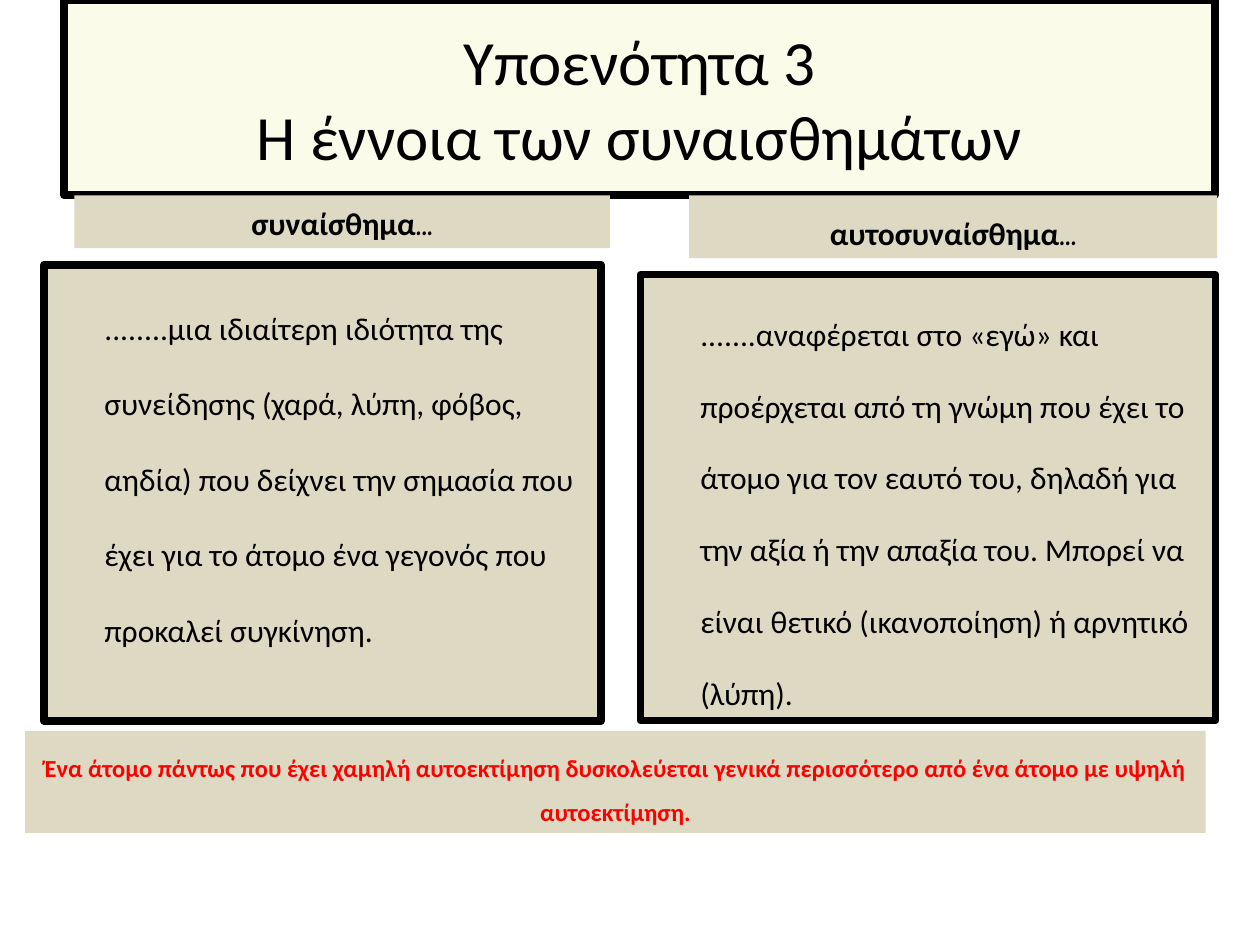
from pptx import Presentation
from pptx import util as u
from pptx.dml.color import RGBColor
from pptx.enum import text

BLACK = RGBColor(0x00, 0x00, 0x00)
RED = RGBColor(0xFF, 0x00, 0x00)
CREAM = RGBColor(0xFB, 0xFB, 0xE9)
SAND = RGBColor(0xDD, 0xD9, 0xC3)

presentation = Presentation()
presentation.slide_width = u.Inches(10)
presentation.slide_height = u.Inches(7.5)
column = presentation.slide_width / 100
row = presentation.slide_height / 75
slide = presentation.slides.add_slide(presentation.slide_layouts[5])


def write(words, *, area, shape=None, fill=SAND, border=0, size=18, color=BLACK,
          bold=False, align=text.PP_ALIGN.CENTER, anchor=text.MSO_ANCHOR.BOTTOM,
          spacing=1, indent=0, ending=""):
    left, top, width, height = area
    shape = shape or slide.shapes.add_textbox(0, 0, 0, 0)
    shape.left, shape.width = round(left * column), round(width * column)
    shape.top, shape.height = round(top * row), round(height * row)
    shape.fill.solid()
    shape.fill.fore_color.rgb = fill
    if border:
        shape.line.color.rgb = BLACK
        shape.line.width = u.Pt(border)
    frame = shape.text_frame
    frame.word_wrap = True
    frame.auto_size = text.MSO_AUTO_SIZE.NONE
    frame.vertical_anchor = anchor
    frame.text = words
    paragraph = frame.paragraphs[0]
    paragraph.alignment = align
    paragraph.line_spacing = spacing
    if indent:
        paragraph._p.get_or_add_pPr().set("marL", str(round(indent * column)))
    if ending:
        paragraph.add_run().text = ending
    for run in paragraph.runs:
        run.font.name = "Comic Neue" if run.text == ending else "Calibri"
        run.font.size = u.Pt(size)
        run.font.bold = bold
        run.font.color.rgb = color


write("Υποενότητα 3\v Η έννοια των συναισθημάτων ", shape=slide.shapes.title,
      area=(5.1, 0, 91.3, 15.5), fill=CREAM, border=4.5, size=36,
      anchor=text.MSO_ANCHOR.MIDDLE)

definitions = [
    ("συναίσθημα", (5.9, 15.5, 42.5, 4.2),
     "........μια ιδιαίτερη ιδιότητα της συνείδησης (χαρά, λύπη, φόβος, αηδία) "
     "που δείχνει την σημασία που έχει για το άτομο ένα γεγονός που προκαλεί "
     "συγκίνηση.", (3.5, 21, 44.2, 36.2), 4.5, 2),
    ("αυτοσυναίσθημα", (54.7, 15.5, 41.9, 5),
     ".......αναφέρεται στο «εγώ» και προέρχεται από τη γνώμη που έχει το άτομο "
     "για τον εαυτό του, δηλαδή για την αξία ή την απαξία του. Μπορεί να είναι "
     "θετικό (ικανοποίηση) ή αρνητικό (λύπη).", (50.8, 21.8, 45.7, 35.4), 4, 1.9),
]
for term, term_area, meaning, meaning_area, border, spacing in definitions:
    write(term, area=term_area, bold=True, ending="...")
    write(meaning, area=meaning_area, border=border, spacing=spacing, indent=3.8,
          align=text.PP_ALIGN.LEFT, anchor=text.MSO_ANCHOR.TOP)

write("Ένα άτομο πάντως που έχει χαμηλή αυτοεκτίμηση δυσκολεύεται γενικά "
      "περισσότερο από ένα άτομο με υψηλή αυτοεκτίμηση.",
      area=(2, 58, 93.7, 8.1), size=14, color=RED, bold=True, spacing=1.5)

presentation.save("out.pptx")
